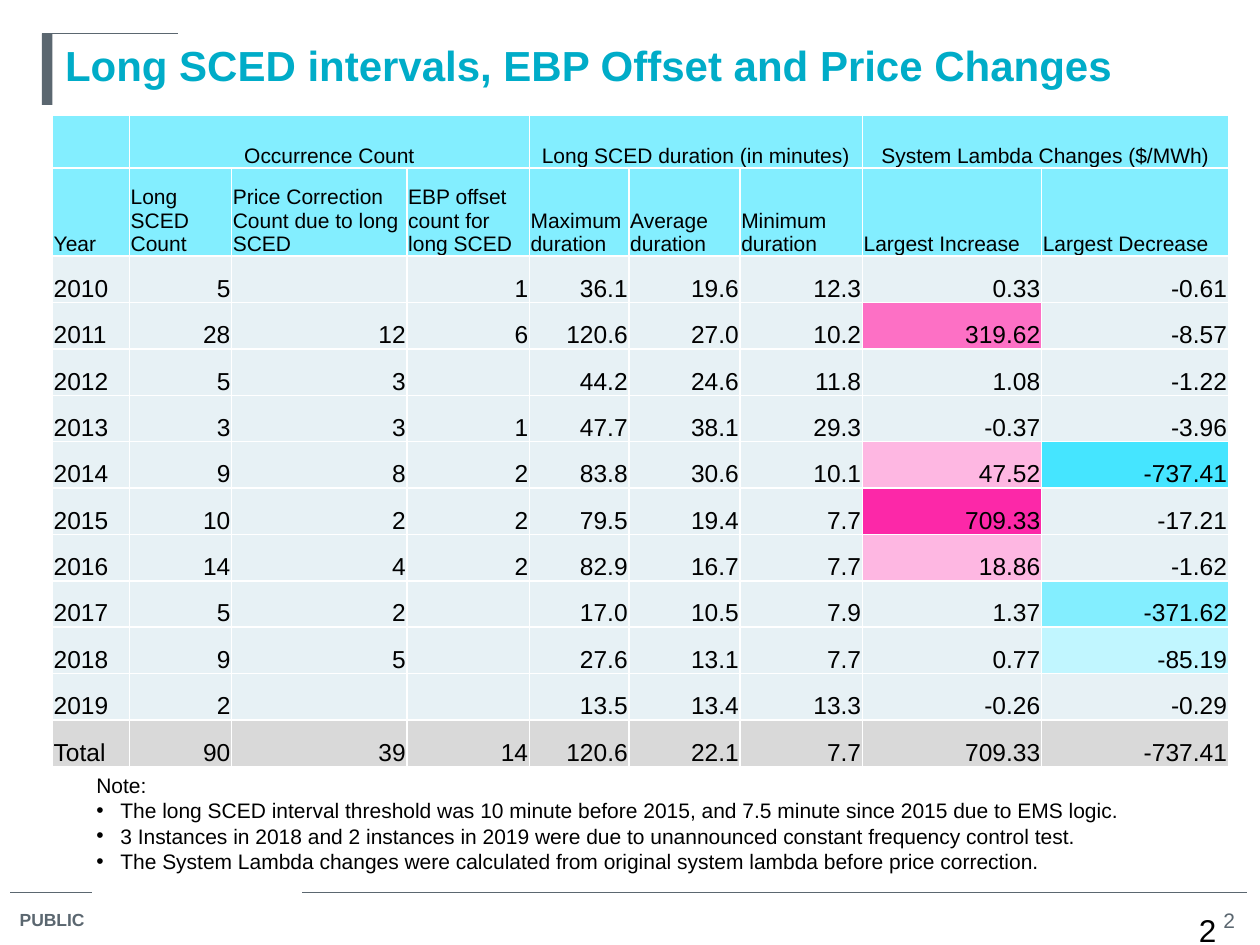
"""Build the slide on long SCED intervals, EBP offset and price changes."""
from dataclasses import dataclass

from lxml import etree
from pptx import Presentation
from pptx.dml.color import RGBColor
from pptx.enum.shapes import MSO_CONNECTOR, MSO_SHAPE
from pptx.enum.text import MSO_ANCHOR, PP_ALIGN
from pptx.oxml.ns import qn
from pptx.util import Inches, Pt

LEFT, CENTER, RIGHT = PP_ALIGN.LEFT, PP_ALIGN.CENTER, PP_ALIGN.RIGHT
TOP, BOTTOM = MSO_ANCHOR.TOP, MSO_ANCHOR.BOTTOM
STRAIGHT, RECT = MSO_CONNECTOR.STRAIGHT, MSO_SHAPE.RECTANGLE

GRID_COLS, GRID_ROWS = 120, 90
WIDTH, HEIGHT = Inches(10), Inches(7.5)
FONT = "Arial"
SLATE, TEAL, BLACK, WHITE = "5B6770", "00ACC8", "000000", "FFFFFF"
HEADER, BODY, TOTAL = "83EEFF", "E7F1F5", "D9D9D9"

TITLE = "Long SCED intervals, EBP Offset and Price Changes"
COLUMN_WEIGHTS = [0.61, 0.81, 1.39, 0.97, 0.79, 0.88, 0.97, 1.42, 1.48]
GROUP_ROW, HEADING_ROW = 5, 8.4
GROUPS = [(1, 3, "Occurrence Count"), (4, 6, "Long SCED duration (in minutes)"),
          (7, 8, "System Lambda Changes ($/MWh)")]
HEADINGS = ["Year", "Long SCED Count", "Price Correction Count due to long SCED",
            "EBP offset count for long SCED", "Maximum duration", "Average duration",
            "Minimum duration", "Largest Increase", "Largest Decrease"]
RECORDS = [
    ["2010", "5", "", "1", "36.1", "19.6", "12.3", "0.33", "-0.61"],
    ["2011", "28", "12", "6", "120.6", "27.0", "10.2", "319.62", "-8.57"],
    ["2012", "5", "3", "", "44.2", "24.6", "11.8", "1.08", "-1.22"],
    ["2013", "3", "3", "1", "47.7", "38.1", "29.3", "-0.37", "-3.96"],
    ["2014", "9", "8", "2", "83.8", "30.6", "10.1", "47.52", "-737.41"],
    ["2015", "10", "2", "2", "79.5", "19.4", "7.7", "709.33", "-17.21"],
    ["2016", "14", "4", "2", "82.9", "16.7", "7.7", "18.86", "-1.62"],
    ["2017", "5", "2", "", "17.0", "10.5", "7.9", "1.37", "-371.62"],
    ["2018", "9", "5", "", "27.6", "13.1", "7.7", "0.77", "-85.19"],
    ["2019", "2", "", "", "13.5", "13.4", "13.3", "-0.26", "-0.29"],
    ["Total", "90", "39", "14", "120.6", "22.1", "7.7", "709.33", "-737.41"],
]
HIGHLIGHTS = {("2011", 7): "FD70C5", ("2014", 7): "FEB7E2", ("2014", 8): "45E5FF",
              ("2015", 7): "FC28A8", ("2016", 7): "FEB7E2", ("2017", 8): "83EEFF",
              ("2018", 8): "C1F6FF"}
NOTES = [
    "The long SCED interval threshold was 10 minute before 2015, and 7.5 minute since 2015 due to EMS logic.",
    "3 Instances in 2018 and 2 instances in 2019 were due to unannounced constant frequency control test.",
    "The System Lambda changes were calculated from original system lambda before price correction.",
]


@dataclass(frozen=True)
class Box:
    """A rectangle in grid columns and rows."""
    col: float
    row: float
    cols: float
    rows: float

    def emu(self) -> tuple:
        """Return left, top, width and height."""
        return x(self.col), y(self.row), x(self.cols), y(self.rows)


@dataclass(frozen=True)
class Rule:
    """A horizontal line in grid columns and rows."""
    start: float
    end: float
    row: float


@dataclass(frozen=True)
class Label:
    """A single line of text in a box."""
    box: Box
    text: str
    size: float
    color: str
    bold: bool = False
    align: PP_ALIGN = LEFT


TABLE_BOX = Box(5, 11, 112, 62)
RULES = [Rule(1, 8.8, 85), Rule(28.8, 118.8, 85), Rule(4, 17, 3.2)]
LABELS = [Label(Box(0.7, 86, 12.3, 3.2), "PUBLIC", 10, SLATE, True),
          Label(Box(109.6, 85.8, 9.2, 3.6), "2", 12, SLATE, align=RIGHT),
          Label(Box(113, 86.2, 6, 2.8), "2", 18, BLACK)]


def x(cols: float) -> int:
    """Convert grid columns to a length."""
    return round(WIDTH * cols / GRID_COLS)


def y(rows: float) -> int:
    """Convert grid rows to a length."""
    return round(HEIGHT * rows / GRID_ROWS)


def rgb(color: str) -> RGBColor:
    """Turn a hex string into a colour."""
    return RGBColor.from_string(color)


def style(p, size: float, color: str = BLACK, bold: bool = False, align=LEFT) -> None:
    """Format a whole paragraph."""
    p.alignment = align
    font = p.font
    font.name, font.size, font.bold = FONT, Pt(size), bold
    font.color.rgb = rgb(color)


def add_rule(s, rule: Rule) -> None:
    """Draw a thin horizontal line."""
    line = s.shapes.add_connector(STRAIGHT, x(rule.start), y(rule.row), x(rule.end), y(rule.row))
    line.line.color.rgb = rgb(SLATE)
    line.line.width = Pt(0.75)
    etree.SubElement(line._element.spPr, qn("a:effectLst"))


def add_label(s, label: Label) -> None:
    """Draw a one-line text box."""
    tf = s.shapes.add_textbox(*label.box.emu()).text_frame
    tf.word_wrap = True
    tf.text = label.text
    style(tf.paragraphs[0], label.size, label.color, label.bold, label.align)


def add_title(s) -> None:
    """Place the title beside its accent bar."""
    bar = s.shapes.add_shape(RECT, *Box(4, 3.2, 1, 6.8).emu())
    bar.shadow.inherit = False
    bar.fill.solid()
    bar.fill.fore_color.rgb = rgb(SLATE)
    bar.line.fill.background()
    sp = s.shapes.title
    sp.left, sp.top, sp.width, sp.height = Box(5, 3.2, 119, 15).emu()
    tf = sp.text_frame
    tf.text = TITLE
    tf.vertical_anchor = TOP
    style(tf.paragraphs[0], 24, TEAL, True)


def fill_cell(cell, text: str, size: float, fill: str, align=LEFT) -> None:
    """Set a cell's text, margins, white borders and fill."""
    cell.margin_left = cell.margin_right = cell.margin_top = Inches(0.01)
    cell.margin_bottom = 0
    cell.vertical_anchor = BOTTOM
    cell.text = text
    style(cell.text_frame.paragraphs[0], size, align=align)
    tc_pr = cell._tc.get_or_add_tcPr()
    for side in ("L", "R", "T", "B"):
        ln = etree.SubElement(tc_pr, qn(f"a:ln{side}"), w=str(Pt(1)))
        solid = etree.SubElement(ln, qn("a:solidFill"))
        etree.SubElement(solid, qn("a:srgbClr"), val=WHITE)
    cell.fill.solid()
    cell.fill.fore_color.rgb = rgb(fill)


def add_interval_table(s) -> None:
    """Draw the yearly table with grouped headings."""
    table = s.shapes.add_table(len(RECORDS) + 2, len(HEADINGS), *TABLE_BOX.emu()).table
    for column, weight in zip(table.columns, COLUMN_WEIGHTS):
        column.width = x(TABLE_BOX.cols * weight / sum(COLUMN_WEIGHTS))
    record_row = (TABLE_BOX.rows - GROUP_ROW - HEADING_ROW) / len(RECORDS)
    for row, height in zip(table.rows, [GROUP_ROW, HEADING_ROW] + [record_row] * len(RECORDS)):
        row.height = y(height)
    group_names = {first: name for first, _, name in GROUPS}
    for c, heading in enumerate(HEADINGS):
        fill_cell(table.cell(0, c), group_names.get(c, ""), 12, HEADER, CENTER)
        fill_cell(table.cell(1, c), heading, 12, HEADER)
    for first, last, _ in GROUPS:
        table.cell(0, first).merge(table.cell(0, last))
    for r, record in enumerate(RECORDS, 2):
        base = TOTAL if record[0] == "Total" else BODY
        for c, value in enumerate(record):
            fill = HIGHLIGHTS.get((record[0], c), base)
            fill_cell(table.cell(r, c), value, 14, fill, RIGHT if c else LEFT)


def add_notes(s) -> None:
    """Draw the bulleted notes below the table."""
    tf = s.shapes.add_textbox(*Box(8, 73, 106, 10.9).emu()).text_frame
    tf.word_wrap = True
    tf.text = "Note:"
    style(tf.paragraphs[0], 12)
    indent = Inches(0.19)
    for note in NOTES:
        p = tf.add_paragraph()
        p.text = note
        p_pr = p._p.get_or_add_pPr()
        p_pr.set("marL", str(indent))
        p_pr.set("indent", str(-indent))
        etree.SubElement(p_pr, qn("a:buFont"), typeface=FONT)
        etree.SubElement(p_pr, qn("a:buChar"), char="•")
        style(p, 12)


def main() -> None:
    """Build and save the presentation."""
    prs = Presentation()
    prs.slide_width, prs.slide_height = WIDTH, HEIGHT
    s = prs.slides.add_slide(prs.slide_layouts[5])
    for rule in RULES:
        add_rule(s, rule)
    for label in LABELS:
        add_label(s, label)
    add_title(s)
    add_interval_table(s)
    add_notes(s)
    prs.save("out.pptx")


if __name__ == "__main__":
    main()
